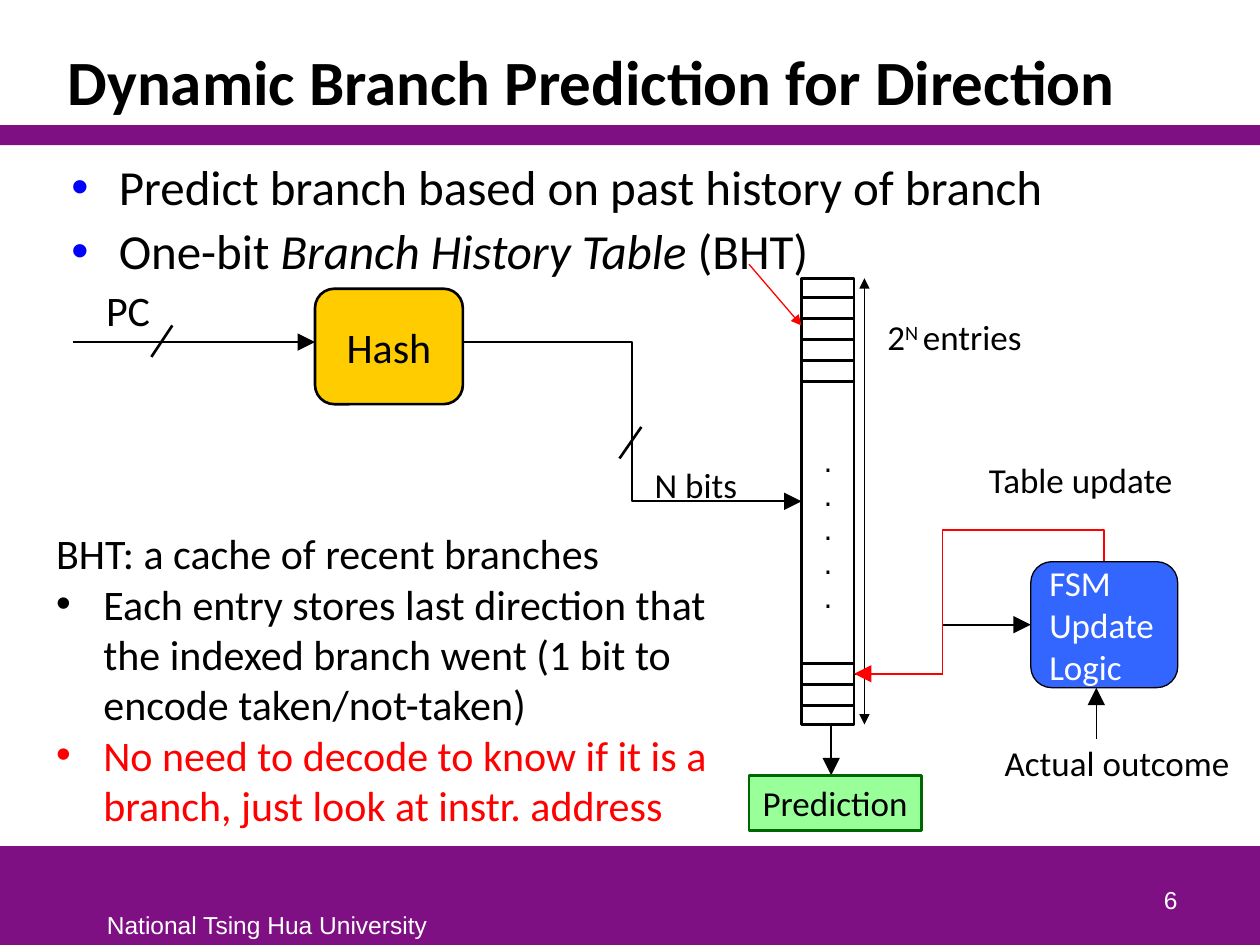
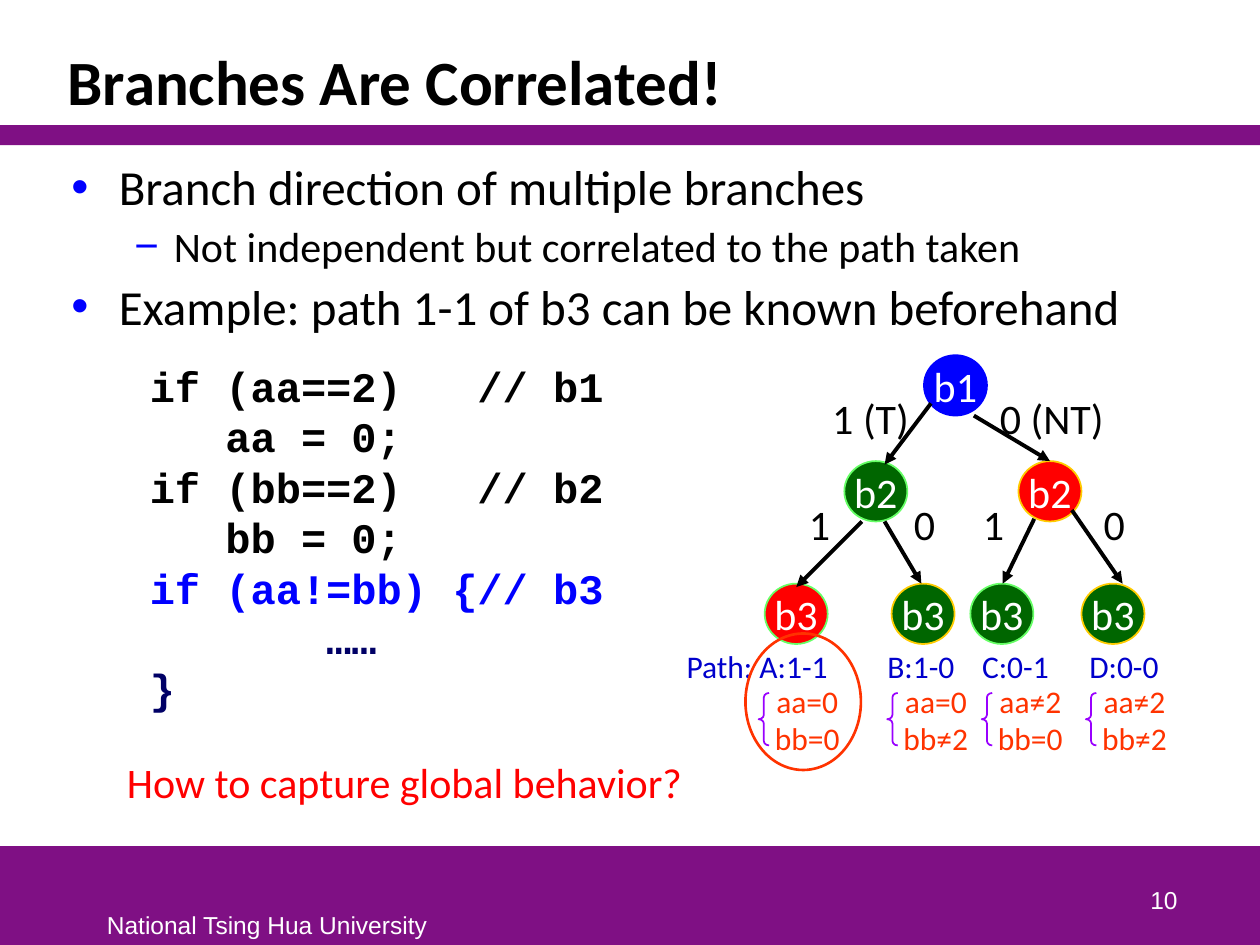
from dataclasses import dataclass
from typing import NamedTuple, Optional

from lxml.etree import SubElement
from pptx import Presentation
from pptx.dml.color import RGBColor
from pptx.enum.shapes import MSO_CONNECTOR, MSO_SHAPE
from pptx.enum.text import MSO_ANCHOR, MSO_AUTO_SIZE, PP_ALIGN
from pptx.oxml.ns import qn
from pptx.util import Pt

BLACK = RGBColor(0x00, 0x00, 0x00)
WHITE = RGBColor(0xFF, 0xFF, 0xFF)
PURPLE = RGBColor(0x7F, 0x10, 0x84)
BLUE = RGBColor(0x00, 0x00, 0xFF)
RED = RGBColor(0xFF, 0x00, 0x00)
GOLD = RGBColor(0xFF, 0xCC, 0x00)
GREEN = RGBColor(0x00, 0x66, 0x00)
BRIGHT_GREEN = RGBColor(0x66, 0xFF, 0x66)
PALE_GREEN = RGBColor(0x99, 0xFF, 0x99)
FSM_BLUE = RGBColor(0x33, 0x66, 0xFF)
NAVY = RGBColor(0x00, 0x00, 0x66)
PATH_BLUE = RGBColor(0x00, 0x00, 0xCC)
ORANGE = RGBColor(0xFF, 0x33, 0x00)
VIOLET = RGBColor(0x99, 0x00, 0xFF)

LEFT, CENTER, RIGHT = PP_ALIGN.LEFT, PP_ALIGN.CENTER, PP_ALIGN.RIGHT


class Box(NamedTuple):
    left: float
    top: float
    width: float
    height: float

    def lengths(self) -> list:
        return [Pt(value) for value in self]


@dataclass(frozen=True)
class Style:
    size: float
    color: RGBColor = BLACK
    font: str = "Calibri"
    bold: bool = False
    align: PP_ALIGN = LEFT


@dataclass(frozen=True)
class Label:
    text: str
    box: Box
    style: Style
    wrap: bool = False


@dataclass(frozen=True)
class Figure:
    kind: MSO_SHAPE
    box: Box
    fill: Optional[RGBColor] = None
    line: Optional[RGBColor] = None
    width: float = 1
    text: str = ""
    style: Style = Style(24)


@dataclass(frozen=True)
class Link:
    start: tuple
    end: tuple
    width: float = 1
    color: RGBColor = BLACK
    tail: str = ""
    head: str = ""
    kind: MSO_CONNECTOR = MSO_CONNECTOR.STRAIGHT


class BulletLevel(NamedTuple):
    mark: str
    margin: float
    hanging: float
    size: float


FIRST_LEVEL = BulletLevel("•", 27, 27, 28)
SECOND_LEVEL = BulletLevel("−", 58.5, 22.5, 24)
NOTE_LEVEL = BulletLevel("•", 27, 27, 24)

TITLE_BOX = Box(31.5, 18, 646, 53.5)
TITLE_STYLE = Style(36, bold=True)
BODY_BOX = Box(33.75, 83, 644, 391)
BANDS = [Box(0, 483.5, 720, 56.5), Box(0, 71.5, 720, 11.5)]
FOOTER = Label("National Tsing Hua University", Box(54, 516.5, 199, 24), Style(14, WHITE, "Arial"))
NUMBER_BOX = Box(530, 490, 150, 36)
NUMBER_STYLE = Style(14, WHITE, "Arial", align=RIGHT)


def format_run(run, style: Style) -> None:
    run.font.size = Pt(style.size)
    run.font.name = style.font
    run.font.bold = style.bold
    run.font.color.rgb = style.color


def append_run(paragraph, text: str, style: Style):
    run = paragraph.add_run()
    run.text = text
    format_run(run, style)
    return run


def write(frame, text: str, style: Style) -> None:
    frame.text = text
    for paragraph in frame.paragraphs:
        paragraph.alignment = style.align
        for run in paragraph.runs:
            format_run(run, style)


def add_label(shapes, label: Label):
    shape = shapes.add_textbox(*label.box.lengths())
    frame = shape.text_frame
    frame.word_wrap = label.wrap
    frame.auto_size = MSO_AUTO_SIZE.SHAPE_TO_FIT_TEXT
    write(frame, label.text, label.style)
    return frame


def add_figure(shapes, figure: Figure):
    shape = shapes.add_shape(figure.kind, *figure.box.lengths())
    shape.shadow.inherit = False
    if figure.fill is None:
        shape.fill.background()
    else:
        shape.fill.solid()
        shape.fill.fore_color.rgb = figure.fill
    if figure.line is None:
        shape.line.fill.background()
    else:
        shape.line.color.rgb = figure.line
        shape.line.width = Pt(figure.width)
    if figure.text:
        shape.text_frame.word_wrap = False
        write(shape.text_frame, figure.text, figure.style)
    return shape


def set_arrowheads(line, head: str, tail: str) -> None:
    """Add triangles; each size is "med", "lg" or empty for none."""
    outline = line._get_or_add_ln()
    for tag, size in (("a:headEnd", head), ("a:tailEnd", tail)):
        if size:
            SubElement(outline, qn(tag), type="triangle", w=size, len=size)


def add_link(shapes, link: Link) -> None:
    points = [Pt(value) for value in (*link.start, *link.end)]
    connector = shapes.add_connector(link.kind, *points)
    connector.line.color.rgb = link.color
    connector.line.width = Pt(link.width)
    set_arrowheads(connector.line, link.head, link.tail)
    SubElement(connector._element.spPr, qn("a:effectLst"))


def set_bullet(paragraph, level: BulletLevel, color: RGBColor) -> None:
    properties = paragraph._p.get_or_add_pPr()
    properties.set("marL", str(Pt(level.margin)))
    properties.set("indent", str(-Pt(level.hanging)))
    bullet_color = SubElement(properties, qn("a:buClr"))
    SubElement(bullet_color, qn("a:srgbClr"), val=str(color))
    SubElement(properties, qn("a:buFont"), typeface="Arial")
    SubElement(properties, qn("a:buChar"), char=level.mark)


def add_body(slide, lines: list):
    frame = slide.shapes.add_textbox(*BODY_BOX.lengths()).text_frame
    frame.word_wrap = True
    frame.text = "\n".join(text for text, _ in lines)
    for index, (paragraph, (_, level)) in enumerate(zip(frame.paragraphs, lines)):
        set_bullet(paragraph, level, BLUE)
        if index:
            paragraph.space_before = Pt(3)
        for run in paragraph.runs:
            format_run(run, Style(level.size))
    frame.margin_top = Pt(6.6)
    return frame


def add_base_slide(presentation, title: str, number: int):
    """Add a slide with the shared title, bands, footer and page number."""
    slide = presentation.slides.add_slide(presentation.slide_layouts[5])
    for band in BANDS:
        add_figure(slide.shapes, Figure(MSO_SHAPE.RECTANGLE, band, PURPLE))
    add_label(slide.shapes, FOOTER)

    heading = slide.shapes.title
    heading.left, heading.top, heading.width, heading.height = TITLE_BOX.lengths()
    frame = heading.text_frame
    frame.auto_size = MSO_AUTO_SIZE.NONE
    frame.vertical_anchor = MSO_ANCHOR.BOTTOM
    write(frame, title, TITLE_STYLE)
    frame.paragraphs[0].line_spacing = 0.85

    page = slide.shapes.add_textbox(*NUMBER_BOX.lengths()).text_frame
    page.word_wrap = True
    page.vertical_anchor = MSO_ANCHOR.BOTTOM
    write(page, str(number), NUMBER_STYLE)
    return slide


def add_history_table(shapes) -> None:
    table = Box(458, 159, 30, 255)
    row_height = 12
    row_tops = [170 + row_height * row for row in range(4)] + [379, 391]
    rows = [Box(table.left, top, table.width, row_height) for top in row_tops]
    for box in [table, *rows]:
        add_figure(shapes, Figure(MSO_SHAPE.RECTANGLE, box, WHITE, BLACK, 1.5))
    dots = Label("\n".join("." * 5), Box(463.5, 250, 24, 104), Style(16, font="DejaVu Sans"), wrap=True)
    for paragraph in add_label(shapes, dots).paragraphs:
        paragraph.line_spacing = Pt(19.5)


def add_update_path(shapes) -> None:
    """Draw the red arrow from the update logic back to the table."""
    builder = shapes.build_freeform(Pt(631), Pt(321), scale=1.0)
    corners = [(631, 303), (538.5, 303), (538.5, 385), (488, 385)]
    builder.add_line_segments([(Pt(x), Pt(y)) for x, y in corners], close=False)
    route = builder.convert_to_shape()
    route.shadow.inherit = False
    route.fill.background()
    route.line.color.rgb = RED
    route.line.width = Pt(1)
    set_arrowheads(route.line, "", "lg")


def build_prediction_slide(presentation) -> None:
    slide = add_base_slide(presentation, "Dynamic Branch Prediction for Direction", 6)
    shapes = slide.shapes
    body = add_body(slide, [
        ("Predict branch based on past history of branch", FIRST_LEVEL),
        ("One-bit ", FIRST_LEVEL),
    ])
    body_style = Style(FIRST_LEVEL.size)
    append_run(body.paragraphs[1], "Branch History Table ", body_style).font.italic = True
    append_run(body.paragraphs[1], "(BHT)", body_style)

    add_history_table(shapes)
    elbow = MSO_CONNECTOR.ELBOW
    for link in [
        Link((42, 195.5), (180, 195.5), tail="lg"),
        Link((264, 195.5), (458, 286.5), tail="lg", kind=elbow),
        Link((494, 159), (494, 414), head="med", tail="med"),
        Link((475, 414), (475, 443), tail="lg"),
        Link((366.5, 244), (354, 262), 1.5),
        Link((98.5, 186), (86.5, 204), 1.5),
        Link((626.5, 422.5), (626.5, 393), 0.75, tail="lg"),
        Link((488, 385), (589, 357), tail="lg", kind=elbow),
        Link((428, 151), (458, 186), 0.75, RED, tail="med"),
    ]:
        add_link(shapes, link)
    add_update_path(shapes)

    small = Style(20)
    rounded = MSO_SHAPE.ROUNDED_RECTANGLE
    for figure in [
        Figure(rounded, Box(180, 165, 84.5, 66), GOLD, BLACK, 1.5, "Hash", Style(24, align=CENTER)),
        Figure(rounded, Box(589, 321, 84, 72), FSM_BLUE, BLACK, 0.75, "FSM\nUpdate\nLogic", Style(20, WHITE)),
        Figure(MSO_SHAPE.RECTANGLE, Box(428, 443, 98.5, 31.5), PALE_GREEN, GREEN, 1.5,
               "Prediction", Style(20, align=CENTER)),
    ]:
        add_figure(shapes, figure)
    for label in [
        Label("PC", Box(53.5, 159, 39.5, 36), Style(24)),
        Label("N bits", Box(367, 261.5, 62, 31.5), small),
        Label("Table update", Box(558, 258.5, 120, 31.5), small),
        Label("Actual outcome", Box(567, 420, 144, 31.5), small),
    ]:
        add_label(shapes, label)

    entries = add_label(shapes, Label("2", Box(500, 177, 93.5, 31.5), small)).paragraphs[0]
    exponent = append_run(entries, "N ", small)
    exponent._r.get_or_add_rPr().set("baseline", "30000")
    append_run(entries, "entries", small)

    notes = add_label(shapes, Label(
        "BHT: a cache of recent branches\n"
        "Each entry stores last direction that the indexed branch went (1 bit to encode taken/not-taken)\n"
        "No need to decode to know if it is a branch, just look at instr. address",
        Box(25, 298, 387.5, 181.5), Style(24), wrap=True))
    for paragraph, color in zip(notes.paragraphs[1:], (BLACK, RED)):
        set_bullet(paragraph, NOTE_LEVEL, color)
        format_run(paragraph.runs[0], Style(24, color))


def add_branch_tree(shapes) -> None:
    node_style = Style(24, WHITE, align=CENTER)
    for name, left, top, fill, line in [
        ("b1", 528, 203, BLUE, BLUE),
        ("b2", 482.5, 263.5, GREEN, BRIGHT_GREEN),
        ("b2", 582, 263.5, RED, GOLD),
        ("b3", 437, 333.5, RED, BRIGHT_GREEN),
        ("b3", 509.5, 333.5, GREEN, GOLD),
        ("b3", 554.5, 333.5, GREEN, BRIGHT_GREEN),
        ("b3", 618, 333.5, GREEN, GOLD),
    ]:
        add_figure(shapes, Figure(MSO_SHAPE.OVAL, Box(left, top, 36, 34.5), fill, line, 1, name, node_style))

    edge_style = Style(24, align=CENTER)
    for start, end, text, left, top, width in [
        ((532, 230.5), (505.5, 265.5), "1 (T)", 468, 220.5, 59),
        ((556.5, 237.5), (600, 263.5), "0 (NT)", 564, 220.5, 74),
        ((492.5, 298), (455, 335.5), "1", 455, 281.5, 26.5),
        ((505.5, 298), (526.5, 333.5), "0", 515, 281.5, 26.5),
        ((591, 296.5), (573, 333.5), "1", 554.5, 281.5, 26.5),
        ((612.5, 291.5), (641.5, 333.5), "0", 623.5, 281.5, 26.5),
    ]:
        add_link(shapes, Link(start, end, 2.25, tail="med"))
        add_label(shapes, Label(text, Box(left, top, width, 36), edge_style))


def add_path_outcomes(shapes) -> None:
    for name, left, width, values, brace_left in [
        ("Path: A:1-1", 384.5, 96.5, "aa=0\nbb=0", 433.5),
        ("B:1-0", 499.5, 53.5, "aa=0\nbb≠2", 507),
        ("C:0-1", 553.5, 53.5, "aa≠2\nbb=0", 561),
        ("D:0-0", 615, 54.5, "aa≠2\nbb≠2", 620.5),
    ]:
        add_label(shapes, Label(name, Box(left, 366, width, 29), Style(18, PATH_BLUE, align=CENTER)))
        outcome = shapes.add_group_shape().shapes
        values_box = Box(brace_left - 0.5, 386, 56.5, 51)
        add_label(outcome, Label(values, values_box, Style(18, ORANGE, align=CENTER)))
        brace = add_figure(outcome, Figure(MSO_SHAPE.LEFT_BRACE, Box(brace_left, 396, 6, 30), line=VIOLET))
        brace.adjustments[0] = 0.42
    add_figure(shapes, Figure(MSO_SHAPE.OVAL, Box(426, 362, 66, 78), line=ORANGE, width=1.5))


def build_correlation_slide(presentation) -> None:
    slide = add_base_slide(presentation, "Branches Are Correlated!", 10)
    add_body(slide, [
        ("Branch direction of multiple branches", FIRST_LEVEL),
        ("Not independent but correlated to the path taken", SECOND_LEVEL),
        ("Example: path 1-1 of b3 can be known beforehand", FIRST_LEVEL),
    ])
    code_lines = [
        ("if (aa==2)   // b1", BLACK),
        ("   aa = 0;", BLACK),
        ("if (bb==2)   // b2", BLACK),
        ("   bb = 0;", BLACK),
        ("if (aa!=bb) {// b3", BLUE),
        ("       ……", NAVY),
        ("}", NAVY),
    ]
    code_style = Style(24, font="Courier New", bold=True)
    code = add_label(slide.shapes, Label(
        "\n".join(text for text, _ in code_lines), Box(78.5, 202.5, 276, 211), code_style))
    for paragraph, (_, color) in zip(code.paragraphs, code_lines):
        paragraph.runs[0].font.color.rgb = color
    add_branch_tree(slide.shapes)
    add_path_outcomes(slide.shapes)
    add_label(slide.shapes, Label("How to capture global behavior?", Box(65.5, 428.5, 335, 36), Style(24, RED)))


def main() -> None:
    presentation = Presentation()
    presentation.slide_width, presentation.slide_height = Pt(720), Pt(540)
    build_prediction_slide(presentation)
    build_correlation_slide(presentation)
    presentation.save("out.pptx")


if __name__ == "__main__":
    main()
